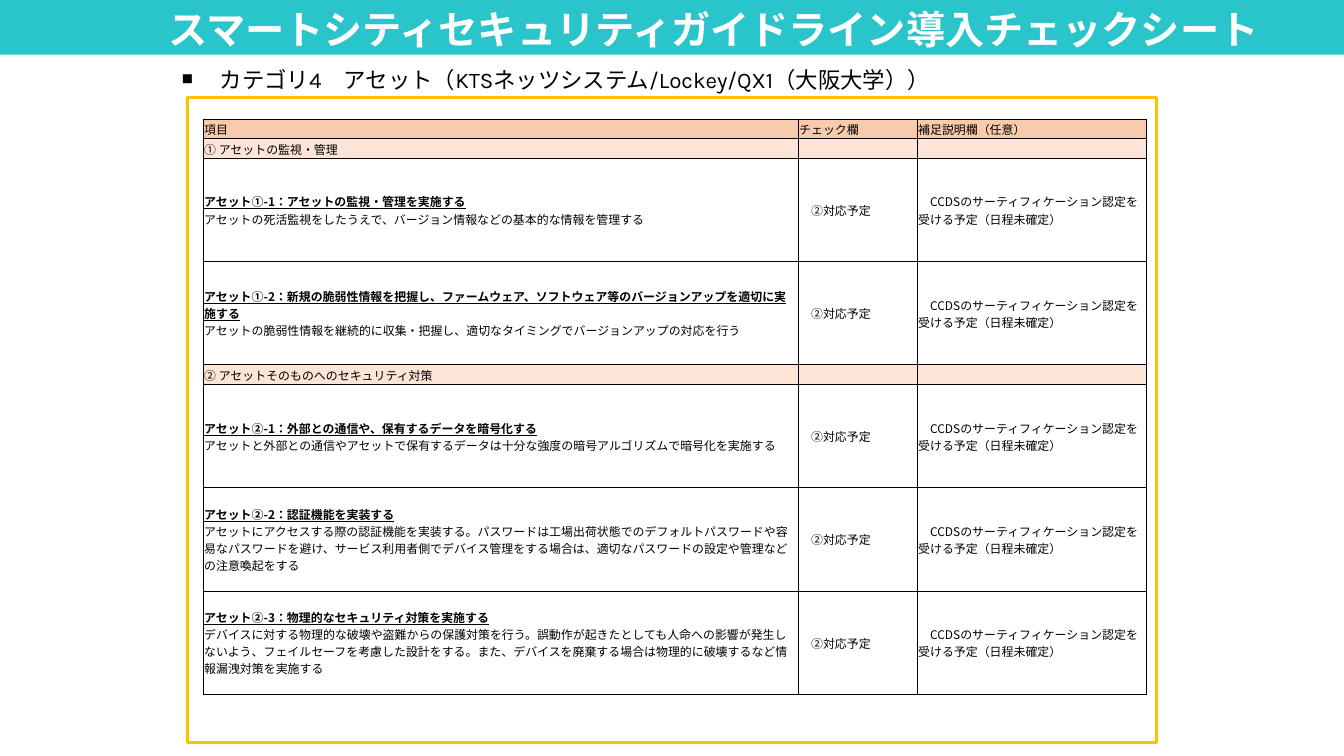
from lxml import etree
from pptx import Presentation
from pptx.dml.color import RGBColor
from pptx.enum import lang, shapes, text
from pptx.oxml import ns
from pptx.util import Pt

TEAL = RGBColor(0x2A, 0xC5, 0xCA)
GOLD = RGBColor(0xFF, 0xC0, 0x00)
PEACH = RGBColor(0xF8, 0xCB, 0xAD)
PALE = RGBColor(0xFC, 0xE4, 0xD6)
BLACK = RGBColor(0, 0, 0)
WHITE = RGBColor(0xFF, 0xFF, 0xFF)
NOTO = "Noto Sans CJK JP"
KARLA = "Karla"
SMALL = 8.5

HEADS = ["項目", "チェック欄", "補足説明欄（任意）"]
STATE = "\u3000②対応予定"
NOTE = "\u3000CCDSのサーティフィケーション認定を受ける予定（日程未確定）"
GROUPS = [
    ("① アセットの監視・管理", [
        ("アセット①-1：アセットの監視・管理を実施する",
         "アセットの死活監視をしたうえで、バージョン情報などの基本的な情報を管理する"),
        ("アセット①-2：新規の脆弱性情報を把握し、ファームウェア、ソフトウェア等のバージョンアップを適切に実施する",
         "アセットの脆弱性情報を継続的に収集・把握し、適切なタイミングでバージョンアップの対応を行う"),
    ]),
    ("② アセットそのものへのセキュリティ対策", [
        ("アセット②-1：外部との通信や、保有するデータを暗号化する",
         "アセットと外部との通信やアセットで保有するデータは十分な強度の暗号アルゴリズムで暗号化を実施する"),
        ("アセット②-2：認証機能を実装する",
         "アセットにアクセスする際の認証機能を実装する。パスワードは工場出荷状態でのデフォルトパスワードや"
         "容易なパスワードを避け、サービス利用者側でデバイス管理をする場合は、適切なパスワードの設定や管理などの注意喚起をする"),
        ("アセット②-3：物理的なセキュリティ対策を実施する",
         "デバイスに対する物理的な破壊や盗難からの保護対策を行う。誤動作が起きたとしても人命への影響が発生しないよう、"
         "フェイルセーフを考慮した設計をする。また、デバイスを廃棄する場合は物理的に破壊するなど情報漏洩対策を実施する"),
    ]),
]


def put(obj, **vals):
    for key, val in vals.items():
        setattr(obj, key, val)


def node(root, tag, **vals):
    return etree.SubElement(root, ns.qn(tag), vals)


def place(shape, left, top, width, height):
    put(shape, left=Pt(left), top=Pt(top), width=Pt(width), height=Pt(height))


def add_run(para, words, size, color=BLACK, name=NOTO, bold=False, under=False):
    run = para.add_run()
    run.text = words
    run.font.color.rgb = color
    put(run.font, size=Pt(size), name=name, bold=bold, underline=under,
        language_id=lang.MSO_LANGUAGE_ID.JAPANESE)
    node(run.font._element, "a:ea", typeface=NOTO)


def add_box(slide, box, fill=None, line=None):
    shape = slide.shapes.add_shape(shapes.MSO_SHAPE.RECTANGLE, *map(Pt, box))
    shape.shadow.inherit = False
    if fill:
        shape.fill.solid()
        shape.fill.fore_color.rgb = fill
    else:
        shape.fill.background()
    if line:
        shape.line.color.rgb = line
        shape.line.width = Pt(2.25)
    else:
        shape.line.fill.background()


def fill_holder(shape, box, words, anchor, **style):
    place(shape, *box)
    frame = shape.text_frame
    put(frame, word_wrap=True, auto_size=text.MSO_AUTO_SIZE.NONE,
        vertical_anchor=anchor, margin_left=Pt(7.2), margin_right=Pt(7.2),
        margin_top=0, margin_bottom=0)
    para = frame.paragraphs[0]
    put(para, alignment=text.PP_ALIGN.LEFT, line_spacing=1.0, space_before=Pt(0))
    add_run(para, words, **style)
    return para


def add_bullet(para):
    props = para._p.get_or_add_pPr()
    props.set("marL", str(Pt(27)))
    props.set("indent", str(Pt(-27)))
    node(props, "a:buSzPct", val="50000")
    node(props, "a:buFont", typeface=NOTO)
    node(props, "a:buChar", char="■")


def add_edges(cell):
    props = cell._tc.get_or_add_tcPr()
    for spot, side in enumerate(("L", "R", "T", "B")):
        edge = etree.Element(ns.qn(f"a:ln{side}"), w=str(Pt(0.5)))
        paint = node(edge, "a:solidFill")
        node(paint, "a:srgbClr", val=str(BLACK))
        props.insert(spot, edge)


def fill_cell(cell, words, fill):
    put(cell, margin_left=Pt(0.7), margin_right=Pt(0.7), margin_top=Pt(0.7),
        margin_bottom=0, vertical_anchor=text.MSO_ANCHOR.MIDDLE)
    if fill:
        cell.fill.solid()
        cell.fill.fore_color.rgb = fill
    else:
        cell.fill.background()
    add_edges(cell)
    para = cell.text_frame.paragraphs[0]
    if isinstance(words, tuple):
        head, words = words
        add_run(para, head, SMALL, bold=True, under=True)
        para.add_line_break()
    if words:
        add_run(para, words, SMALL)
    node(para._p, "a:endParaRPr", sz=str(int(SMALL * 100)))


def list_rows():
    rows = [(HEADS, PEACH, 14)]
    for label, items in GROUPS:
        rows.append(([label, "", ""], PALE, 14))
        rows += [([item, STATE, NOTE], None, 73.8) for item in items]
    return rows


def add_sheet(slide):
    rows = list_rows()
    widths = [425, 85, 164]
    high = sum(row[2] for row in rows)
    box = map(Pt, (145.2, 85, sum(widths), high))
    table = slide.shapes.add_table(len(rows), len(widths), *box).table
    put(table, first_row=False, horz_banding=False)
    for col, width in zip(table.columns, widths):
        col.width = Pt(width)
    for row, (cells, fill, height) in zip(table.rows, rows):
        row.height = Pt(height)
        for cell, words in zip(row.cells, cells):
            fill_cell(cell, words, fill)


def main():
    deck = Presentation()
    put(deck, slide_width=Pt(960), slide_height=Pt(540))
    slide = deck.slides.add_slide(deck.slide_layouts[1])
    title, body = slide.placeholders
    add_box(slide, (0, 0, 960, 39), fill=TEAL)
    add_box(slide, (133.9, 69.8, 691.9, 460.8), line=GOLD)
    para = fill_holder(
        body, (122.8, 43.2, 582.5, 26.6),
        "カテゴリ4\u3000アセット（KTSネッツシステム/Lockey/QX1（大阪大学））",
        text.MSO_ANCHOR.MIDDLE, size=16, name=KARLA)
    add_bullet(para)
    add_sheet(slide)
    fill_holder(
        title, (113, 0, 820, 41),
        "スマートシティセキュリティガイドライン導入チェックシート",
        text.MSO_ANCHOR.MIDDLE, size=28, color=WHITE, bold=True)
    slide.shapes._spTree.append(title._element)
    deck.save("out.pptx")


if __name__ == "__main__":
    main()
